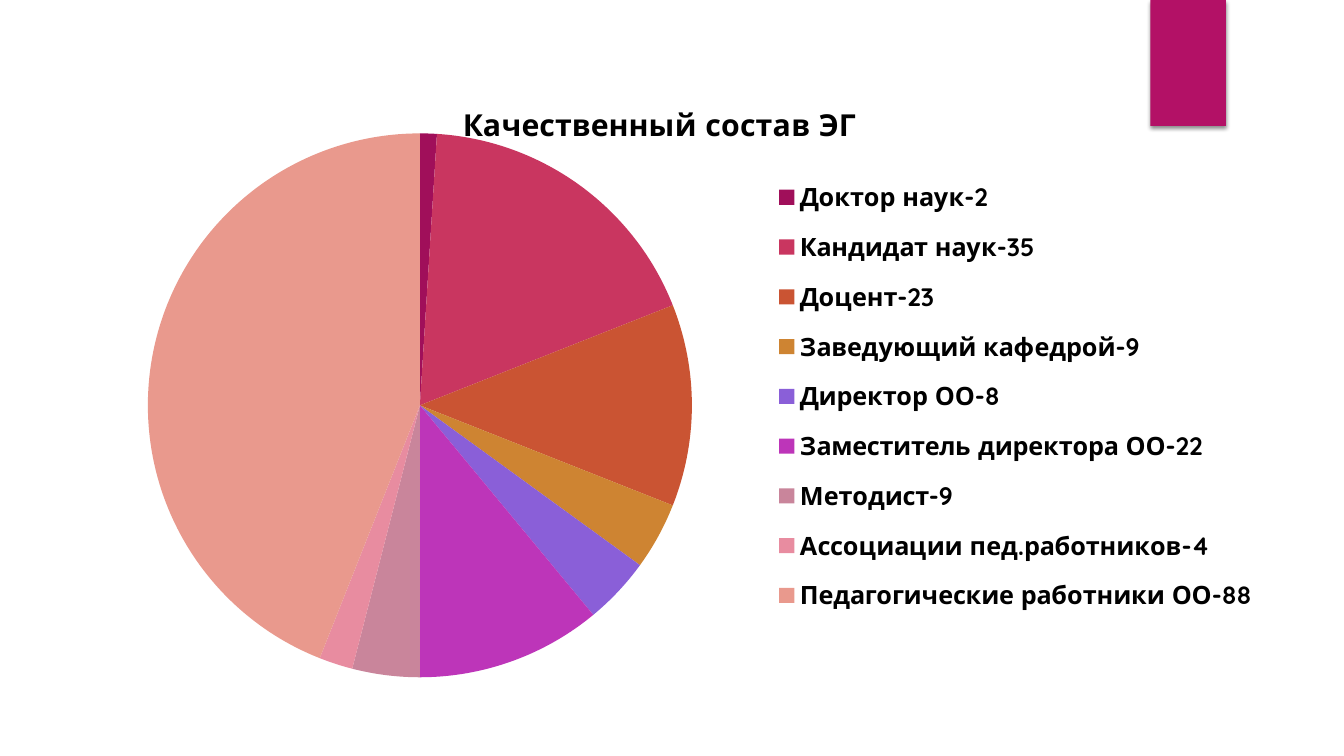
from dataclasses import dataclass

from lxml import etree
from pptx import Presentation
from pptx import util as u
from pptx.chart.data import CategoryChartData
from pptx.dml.color import RGBColor
from pptx.enum import chart as ch, shapes
from pptx.oxml import parse_xml
from pptx.oxml.ns import nsdecls, qn


@dataclass(frozen=True)
class Theme:
    font: str = "Quicksand"
    text: str = "000000"
    accent: str = "B31166"
    title_size: float = 21.6
    legend_size: float = 18


THEME = Theme()

# Category, share in percent, slice colour
EXPERT_GROUPS = [
    ("Доктор наук-2", 1, "A00F5A"),
    ("Кандидат наук-35", 18, "C93660"),
    ("Доцент-23", 12, "CA5433"),
    ("Заведующий кафедрой-9", 4, "CE8432"),
    ("Директор ОО-8", 4, "8A5FD8"),
    ("Заместитель директора ОО-22", 11, "BD35B9"),
    ("Методист-9", 4, "C9859B"),
    ("Ассоциации пед.работников-4", 2, "E88CA0"),
    ("Педагогические работники ОО-88", 44, "E9998D"),
]


def format_font(font, size, bold=True, color=THEME.text):
    font.name = THEME.font
    font.size = u.Pt(size)
    font.bold = bold
    font.color.rgb = RGBColor.from_string(color)


def write_text(frame, text, **fmt):
    paragraph = frame.paragraphs[0]
    run = paragraph.add_run()
    run.text = text
    format_font(run.font, **fmt)


def add_ribbon(slide, left, top, width, height):
    """Coloured tab with a soft shadow below it."""
    ribbon = slide.shapes.add_shape(
        shapes.MSO_SHAPE.RECTANGLE,
        *(u.Inches(n) for n in (left, top, width, height)))
    ribbon.fill.solid()
    ribbon.fill.fore_color.rgb = RGBColor.from_string(THEME.accent)
    ribbon.line.fill.background()
    ribbon.shadow.inherit = False
    effects = ribbon.fill._xPr.find(qn("a:effectLst"))
    effects.append(parse_xml(
        f'<a:outerShdw {nsdecls("a")} blurRad="{u.Pt(3)}" dist="{u.Pt(2)}" '
        'dir="5400000" rotWithShape="0"><a:srgbClr val="000000">'
        '<a:alpha val="45000"/></a:srgbClr></a:outerShdw>'))


def place(part, target=None, **fractions):
    """Fix a chart part at fractions of the chart's size."""
    layout = part.get_or_add_layout() if hasattr(part, "get_or_add_layout") else part.find(qn("c:layout"))
    if layout is None:
        layout = etree.Element(qn("c:layout"))
        part.insert(0, layout)
    for child in list(layout):
        layout.remove(child)
    manual = etree.SubElement(layout, qn("c:manualLayout"))
    settings = {"layoutTarget": target} if target else {}
    settings.update(xMode="edge", yMode="edge", **fractions)
    for tag, value in settings.items():
        etree.SubElement(manual, qn(f"c:{tag}")).set("val", str(value))


def add_pie(slide, title, groups, left, top, width, height):
    data = CategoryChartData()
    data.categories = [name for name, _, _ in groups]
    data.add_series("Series 1", [share for _, share, _ in groups])
    pie = slide.shapes.add_chart(
        ch.XL_CHART_TYPE.PIE,
        *(u.Inches(n) for n in (left, top, width, height)), data).chart
    format_font(pie.font, THEME.legend_size, bold=False)

    # Title
    pie.has_title = True
    write_text(pie.chart_title.text_frame, title, size=THEME.title_size)
    pie.chart_title.include_in_layout = False

    # Slices
    plot = pie.plots[0]
    plot.vary_by_categories = True
    for index, (_, _, color) in enumerate(groups):
        fill = plot.series[0].points[index].format.fill
        fill.solid()
        fill.fore_color.rgb = RGBColor.from_string(color)

    # Legend
    pie.has_legend = True
    pie.legend.position = ch.XL_LEGEND_POSITION.RIGHT
    pie.legend.include_in_layout = False
    format_font(pie.legend.font, THEME.legend_size)

    # Positions inside the chart
    plot_area = pie._chartSpace.chart.plotArea
    place(plot_area, "inner", x=0.05, y=0.09, w=0.51, h=0.91)
    legend = pie.legend._element
    legend_layout = legend.find(qn("c:layout"))
    if legend_layout is None:
        legend_layout = etree.Element(qn("c:layout"))
        legend.find(qn("c:legendPos")).addnext(legend_layout)
    place(legend_layout.getparent(), x=0.59, y=0.14, w=0.4, h=0.78)


def main():
    deck = Presentation()
    deck.slide_width = u.Inches(13.33)
    deck.slide_height = u.Inches(7.5)
    slide = deck.slides.add_slide(deck.slide_layouts[6])

    add_ribbon(slide, 11.41, 0, 0.75, 1.25)
    add_pie(slide, "Качественный состав ЭГ", EXPERT_GROUPS,
            0.45, 0.79, 12.18, 5.93)

    deck.save("out.pptx")


if __name__ == "__main__":
    main()
